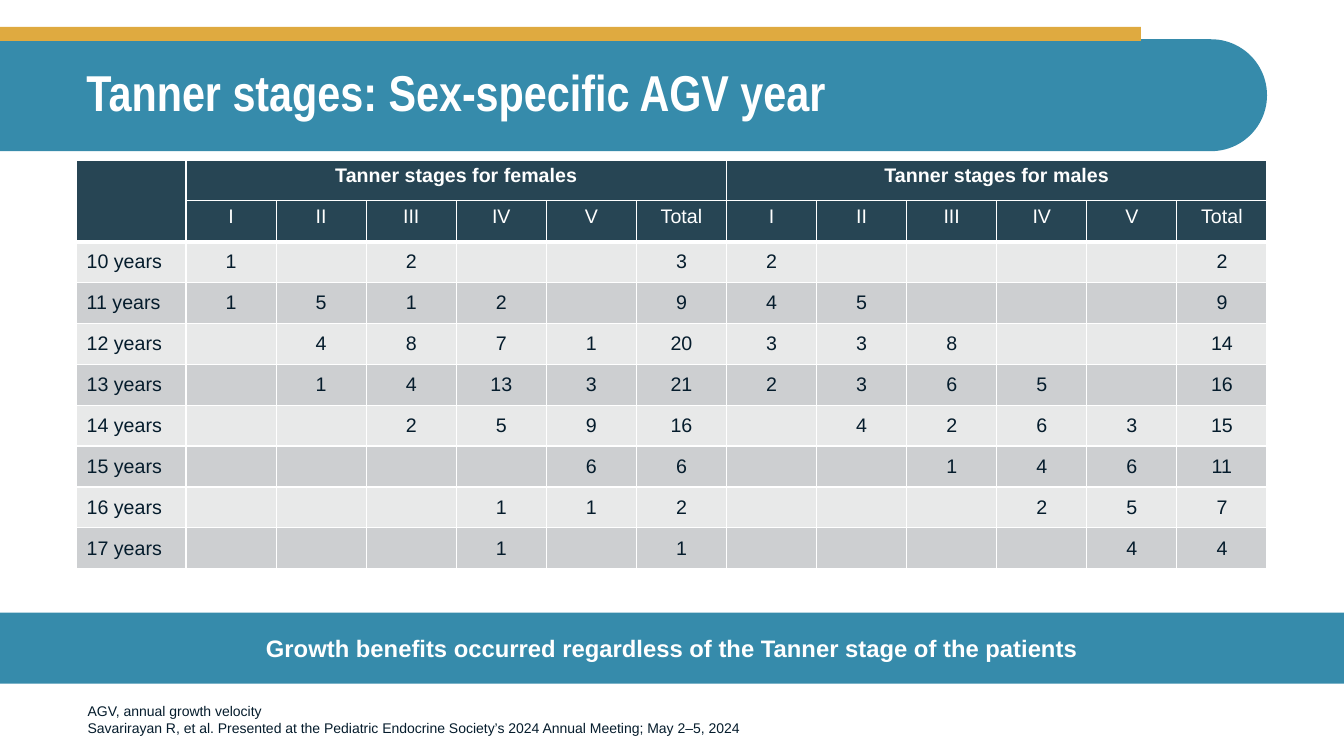
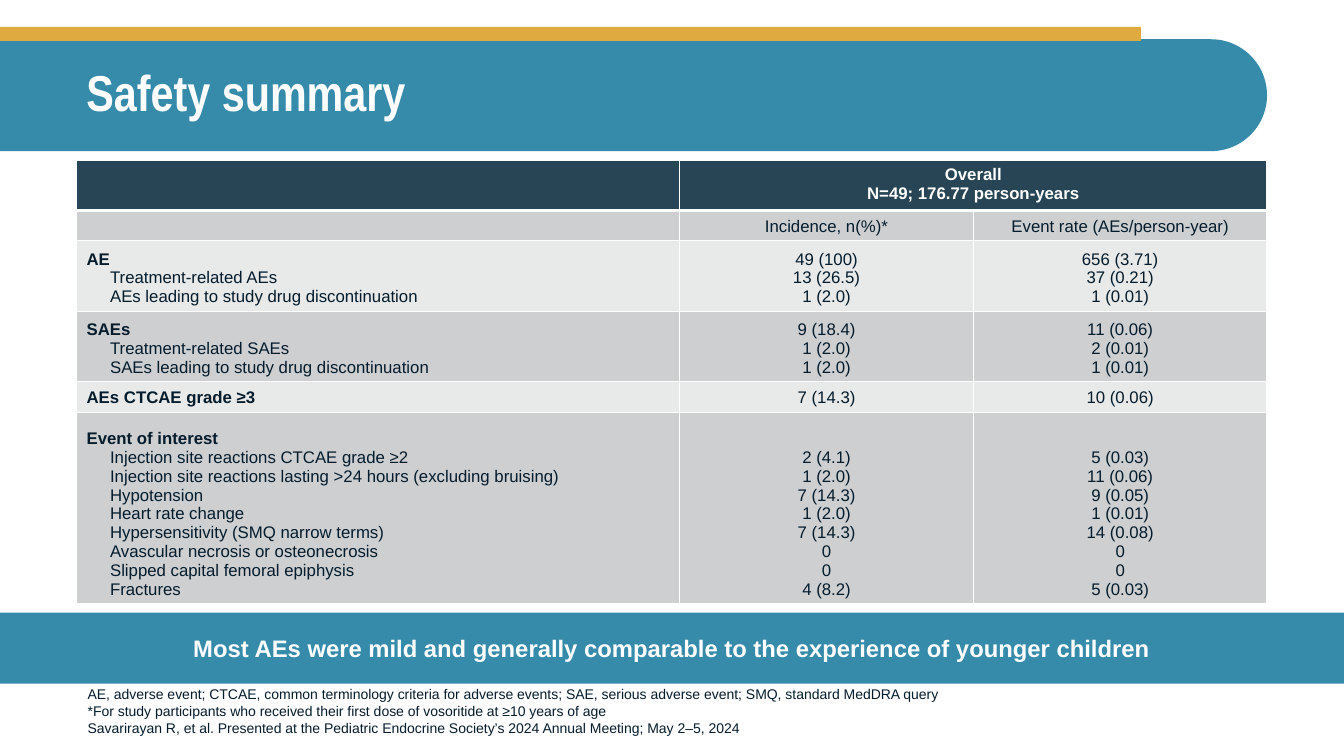
from dataclasses import dataclass

from lxml.etree import SubElement
from pptx import Presentation
from pptx.dml.color import RGBColor
from pptx.enum.shapes import MSO_SHAPE
from pptx.enum.text import MSO_ANCHOR, PP_ALIGN
from pptx.oxml.ns import qn
from pptx.shapes.autoshape import Shape
from pptx.slide import Slide
from pptx.table import Table, _Cell
from pptx.text.text import TextFrame
from pptx.util import Cm, Pt

WHITE = "FFFFFF"
INK = "051C2C"
TEAL = "368BAB"
GOLD = "DFAA40"
NAVY = "274554"
LIGHT_GREY = "E8E9E9"
MID_GREY = "CDCFD1"

SLIDE_WIDTH, SLIDE_HEIGHT = 33.87, 19.05
BAND_TOP, BAND_WIDTH, BAND_HEIGHT = 0.99, 31.93, 2.82
CONTENT_LEFT, CONTENT_WIDTH = 1.93, 30
TABLE_TOP = 4.03
STAGE_WIDTH = 2.27
STAGES = ("I", "II", "III", "IV", "V", "Total")
GROUP_SIZE = len(STAGES)
GROUP_REST = ("",) * (GROUP_SIZE - 1)
CITATION = (
    "Savarirayan R, et al. Presented at the Pediatric Endocrine Society’s "
    "2024 Annual Meeting; May 2–5, 2024"
)


@dataclass(frozen=True)
class TextStyle:
    size: float
    color: str = INK
    bold: bool = False
    font: str = "Arial"
    align: PP_ALIGN = PP_ALIGN.LEFT
    line_spacing: float | None = None
    indent: float = 0


@dataclass(frozen=True)
class Box:
    left: float
    top: float
    width: float
    height: float

    def lengths(self) -> tuple[Cm, Cm, Cm, Cm]:
        return Cm(self.left), Cm(self.top), Cm(self.width), Cm(self.height)


@dataclass(frozen=True)
class TableContent:
    rows: tuple[tuple[str, ...], ...]
    widths: tuple[float, ...]
    heights: tuple[float, ...]
    size: float
    header_rows: int
    merges: tuple[tuple[int, int, int, int], ...]
    body_anchor: MSO_ANCHOR
    bold_labels: bool = False


@dataclass(frozen=True)
class SlideContent:
    title: str
    table: TableContent
    message: str
    footnotes: tuple[str, ...]


TITLE_STYLE = TextStyle(36, WHITE, True, "Arial Narrow", line_spacing=0.9)
MESSAGE_STYLE = TextStyle(17, WHITE, True, align=PP_ALIGN.CENTER)
FOOTNOTE_STYLE = TextStyle(10)

TANNER_ROWS = (
    ("", "Tanner stages for females", *GROUP_REST, "Tanner stages for males", *GROUP_REST),
    ("", *STAGES, *STAGES),
    ("10 years", "1", "", "2", "", "", "3", "2", "", "", "", "", "2"),
    ("11 years", "1", "5", "1", "2", "", "9", "4", "5", "", "", "", "9"),
    ("12 years", "", "4", "8", "7", "1", "20", "3", "3", "8", "", "", "14"),
    ("13 years", "", "1", "4", "13", "3", "21", "2", "3", "6", "5", "", "16"),
    ("14 years", "", "", "2", "5", "9", "16", "", "4", "2", "6", "3", "15"),
    ("15 years", "", "", "", "", "6", "6", "", "", "1", "4", "6", "11"),
    ("16 years", "", "", "", "1", "1", "2", "", "", "", "2", "5", "7"),
    ("17 years", "", "", "", "1", "", "1", "", "", "", "", "4", "4"),
)

SAFETY_ROWS = (
    ("", "Overall\nN=49; 176.77 person-years", ""),
    ("", "Incidence, n(%)*", "Event rate (AEs/person-year)"),
    (
        "AE\nTreatment-related AEs\nAEs leading to study drug discontinuation",
        "49 (100)\n13 (26.5)\n1 (2.0)",
        "656 (3.71)\n37 (0.21)\n1 (0.01)",
    ),
    (
        "SAEs\nTreatment-related SAEs\nSAEs leading to study drug discontinuation",
        "9 (18.4)\n1 (2.0)\n1 (2.0)",
        "11 (0.06)\n2 (0.01)\n1 (0.01)",
    ),
    ("AEs CTCAE grade ≥3", "7 (14.3)", "10 (0.06)"),
    (
        "Event of interest\nInjection site reactions CTCAE grade ≥2\n"
        "Injection site reactions lasting >24 hours (excluding bruising)\n"
        "Hypotension\nHeart rate change\nHypersensitivity (SMQ narrow terms)\n"
        "Avascular necrosis or osteonecrosis\nSlipped capital femoral epiphysis\nFractures",
        "2 (4.1)\n1 (2.0)\n7 (14.3)\n1 (2.0)\n7 (14.3)\n0\n0\n4 (8.2)",
        "5 (0.03)\n11 (0.06)\n9 (0.05)\n1 (0.01)\n14 (0.08)\n0\n0\n5 (0.03)",
    ),
)


def height_for(row: tuple[str, ...]) -> float:
    lines = max(len(text.split("\n")) for text in row)
    return 0.47 * lines + 0.25


SLIDES = (
    SlideContent(
        "Tanner stages: Sex-specific AGV year",
        TableContent(
            rows=TANNER_ROWS,
            widths=(CONTENT_WIDTH - 2 * GROUP_SIZE * STAGE_WIDTH,)
            + (STAGE_WIDTH,) * (2 * GROUP_SIZE),
            heights=(1.03,) * len(TANNER_ROWS),
            size=14,
            header_rows=2,
            merges=((0, 0, 1, 0), (0, 1, 0, GROUP_SIZE), (0, GROUP_SIZE + 1, 0, 2 * GROUP_SIZE)),
            body_anchor=MSO_ANCHOR.MIDDLE,
        ),
        "Growth benefits occurred regardless of the Tanner stage of the patients",
        ("AGV, annual growth velocity", CITATION),
    ),
    SlideContent(
        "Safety summary",
        TableContent(
            rows=SAFETY_ROWS,
            widths=(15.2, 7.4, 7.4),
            heights=tuple(height_for(row) for row in SAFETY_ROWS),
            size=12,
            header_rows=1,
            merges=((0, 1, 0, 2),),
            body_anchor=MSO_ANCHOR.BOTTOM,
            bold_labels=True,
        ),
        "Most AEs were mild and generally comparable to the experience of younger children",
        (
            "AE, adverse event; CTCAE, common terminology criteria for adverse events; "
            "SAE, serious adverse event; SMQ, standard MedDRA query",
            "*For study participants who received their first dose of vosoritide at ≥10 years of age",
            CITATION,
        ),
    ),
)


def rgb(color: str) -> RGBColor:
    return RGBColor.from_string(color)


def add_line(frame: TextFrame, text: str, style: TextStyle, first: bool) -> None:
    paragraph = frame.paragraphs[0] if first else frame.add_paragraph()
    paragraph.alignment = style.align
    if style.line_spacing:
        paragraph.line_spacing = style.line_spacing
    if style.indent:
        paragraph._p.get_or_add_pPr().set("marL", str(Cm(style.indent)))
    if not text:
        SubElement(paragraph._p, qn("a:endParaRPr"), sz=str(int(style.size * 100)))
        return
    run = paragraph.add_run()
    run.text = text
    run.font.name = style.font
    run.font.size = Pt(style.size)
    run.font.bold = style.bold
    run.font.color.rgb = rgb(style.color)


def add_block(slide: Slide, box: Box, color: str, preset: MSO_SHAPE = MSO_SHAPE.RECTANGLE) -> Shape:
    shape = slide.shapes.add_shape(preset, *box.lengths())
    shape.shadow.inherit = False
    shape.fill.solid()
    shape.fill.fore_color.rgb = rgb(color)
    shape.line.fill.background()
    return shape


def add_text(
    slide: Slide, box: Box, lines: tuple[str, ...], style: TextStyle, anchor: MSO_ANCHOR
) -> None:
    frame = slide.shapes.add_textbox(*box.lengths()).text_frame
    frame.word_wrap = True
    frame.vertical_anchor = anchor
    for index, line in enumerate(lines):
        add_line(frame, line, style, index == 0)


def add_title_band(slide: Slide, title: str) -> None:
    turned_box = Box(
        (BAND_WIDTH - BAND_HEIGHT) / 2,
        BAND_TOP + (BAND_HEIGHT - BAND_WIDTH) / 2,
        BAND_HEIGHT,
        BAND_WIDTH,
    )
    band = add_block(slide, turned_box, TEAL, MSO_SHAPE.ROUND_2_SAME_RECTANGLE)
    band.rotation = 90
    band.adjustments[0] = 0.5
    band.adjustments[1] = 0
    add_block(slide, Box(0, 0.68, 28.75, 0.35), GOLD)
    title_box = Box(CONTENT_LEFT, BAND_TOP, CONTENT_WIDTH, BAND_HEIGHT)
    add_text(slide, title_box, (title,), TITLE_STYLE, MSO_ANCHOR.MIDDLE)


def add_message_bar(slide: Slide, message: str) -> None:
    bar = add_block(slide, Box(0, 15.44, SLIDE_WIDTH, 1.79), TEAL)
    frame = bar.text_frame
    frame.word_wrap = True
    frame.vertical_anchor = MSO_ANCHOR.MIDDLE
    frame.margin_left = frame.margin_right = Cm(2)
    add_line(frame, message, MESSAGE_STYLE, True)


def set_borders(cell: _Cell, top: float, bottom: float) -> None:
    properties = cell._tc.get_or_add_tcPr()
    sides = (("a:lnL", 1), ("a:lnR", 1), ("a:lnT", top), ("a:lnB", bottom))
    for index, (tag, width) in enumerate(sides):
        border = SubElement(properties, qn(tag), w=str(Pt(width)))
        fill = SubElement(border, qn("a:solidFill"))
        SubElement(fill, qn("a:srgbClr"), val=WHITE)
        properties.insert(index, border)


def cell_style(content: TableContent, row: int, column: int, line: int) -> TextStyle:
    is_label = column == 0
    outlined = content.bold_labels and is_label
    return TextStyle(
        content.size,
        WHITE if row < content.header_rows else INK,
        row == 0 or (outlined and line == 0),
        align=PP_ALIGN.LEFT if is_label else PP_ALIGN.CENTER,
        indent=0.59 if outlined and line > 0 else 0,
    )


def fill_cell(table: Table, content: TableContent, row: int, column: int) -> None:
    cell = table.cell(row, column)
    is_header = row < content.header_rows
    cell.fill.solid()
    band_color = LIGHT_GREY if row % 2 == 0 else MID_GREY
    cell.fill.fore_color.rgb = rgb(NAVY if is_header else band_color)
    cell.vertical_anchor = MSO_ANCHOR.TOP if is_header else content.body_anchor
    set_borders(
        cell,
        top=3 if row == content.header_rows else 1,
        bottom=3 if row == content.header_rows - 1 else 1,
    )
    for line, text in enumerate(content.rows[row][column].split("\n")):
        add_line(cell.text_frame, text, cell_style(content, row, column, line), line == 0)


def add_data_table(slide: Slide, content: TableContent) -> None:
    box = Box(CONTENT_LEFT, TABLE_TOP, CONTENT_WIDTH, sum(content.heights))
    frame = slide.shapes.add_table(len(content.rows), len(content.widths), *box.lengths())
    table = frame.table
    table.first_row = table.horz_banding = False
    for column, width in zip(table.columns, content.widths):
        column.width = Cm(width)
    for row, height in zip(table.rows, content.heights):
        row.height = Cm(height)
    for row in range(len(content.rows)):
        for column in range(len(content.widths)):
            fill_cell(table, content, row, column)
    for top, left, bottom, right in content.merges:
        table.cell(top, left).merge(table.cell(bottom, right))


def main() -> None:
    presentation = Presentation()
    presentation.slide_width = Cm(SLIDE_WIDTH)
    presentation.slide_height = Cm(SLIDE_HEIGHT)
    for content in SLIDES:
        slide = presentation.slides.add_slide(presentation.slide_layouts[6])
        add_title_band(slide, content.title)
        add_data_table(slide, content.table)
        footnote_box = Box(1.96, 17.25, 25.1, 1.42)
        add_text(slide, footnote_box, content.footnotes, FOOTNOTE_STYLE, MSO_ANCHOR.BOTTOM)
        add_message_bar(slide, content.message)
    presentation.save("out.pptx")


if __name__ == "__main__":
    main()
